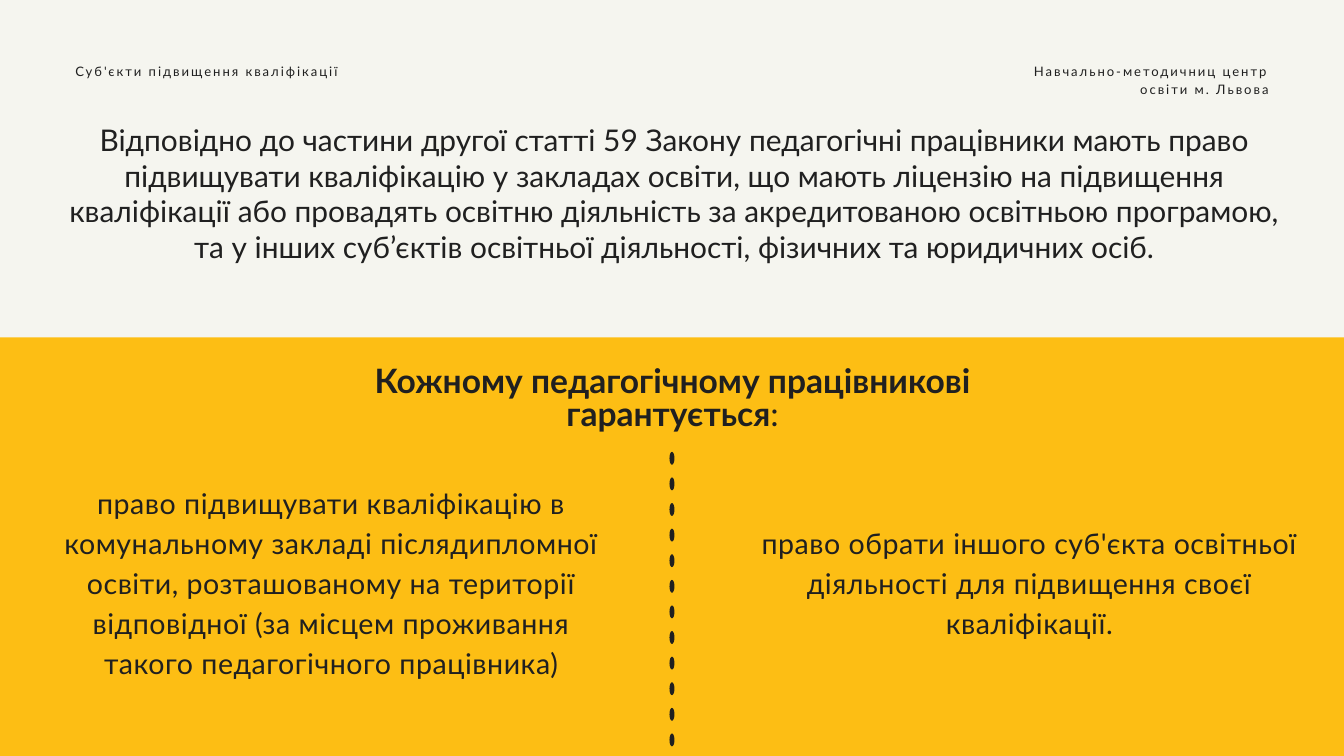
"""Builds a slide on where teachers may raise their qualification."""
from dataclasses import dataclass
from math import cos, pi, sin

from pptx import Presentation
from pptx.dml.color import RGBColor
from pptx.enum.shapes import MSO_SHAPE
from pptx.enum.text import MSO_AUTO_SIZE, PP_ALIGN
from pptx.util import Inches, Pt

LEFT, CENTER, RIGHT = PP_ALIGN.LEFT, PP_ALIGN.CENTER, PP_ALIGN.RIGHT
RECTANGLE = MSO_SHAPE.RECTANGLE
GROW = MSO_AUTO_SIZE.SHAPE_TO_FIT_TEXT
CELL = Inches(0.1)
COLUMNS, ROWS = 200, 112.5


@dataclass(frozen=True)
class TextStyle:
    size: float
    leading: float
    tracking: float = 0


@dataclass(frozen=True)
class Theme:
    font: str = "Lato"
    paper: RGBColor = RGBColor(0xF5, 0xF5, 0xEF)
    band: RGBColor = RGBColor(0xFD, 0xBE, 0x14)
    ink: RGBColor = RGBColor(0x20, 0x20, 0x20)
    label: TextStyle = TextStyle(14, 19.6, 2.1)
    intro: TextStyle = TextStyle(32, 38)
    heading: TextStyle = TextStyle(36, 36)
    right: TextStyle = TextStyle(30.6, 42.9, 0.6)


@dataclass(frozen=True)
class Area:
    column: float
    row: float
    columns: float
    rows: float

    def box(self) -> list[int]:
        return [round(n * CELL) for n in (self.column, self.row, self.columns, self.rows)]


@dataclass(frozen=True)
class Passage:
    area: Area
    style: TextStyle
    text: str
    align: PP_ALIGN = CENTER
    bold_lead: str = ""


@dataclass(frozen=True)
class DottedDivider:
    column: float
    first_row: float
    pitch: float
    dots: int
    radius_x: float
    radius_y: float


THEME = Theme()
BAND = Area(-3, 50.2, 206.8, 71.8)
DIVIDER = DottedDivider(COLUMNS / 2, 68.2, 3.81, 12, 0.37, 0.95)
PASSAGES = (
    Passage(
        Area(7.9, 18.2, 185, 21.3), THEME.intro,
        "Відповідно до частини другої статті 59 Закону педагогічні працівники мають право "
        "підвищувати кваліфікацію у закладах освіти, що мають ліцензію на підвищення "
        "кваліфікації або провадять освітню діяльність за акредитованою освітньою програмою, "
        "та у інших суб’єктів освітньої діяльності, фізичних та юридичних осіб.",
    ),
    Passage(
        Area(40.6, 54.5, 119, 5.2), THEME.heading, ":",
        bold_lead="Кожному педагогічному працівникові гарантується",
    ),
    Passage(
        Area(7.5, 71.4, 83.6, 29.3), THEME.right,
        "право підвищувати кваліфікацію в комунальному закладі післядипломної освіти, "
        "розташованому на території відповідної (за місцем проживання такого "
        "педагогічного працівника)",
    ),
    Passage(
        Area(153.2, 9, 35.6, 5.3), THEME.label,
        "Навчально-методичниц центр освіти м. Львова", RIGHT,
    ),
    Passage(
        Area(11.2, 9, 46.1, 2.6), THEME.label,
        "Суб'єкти підвищення кваліфікації", LEFT,
    ),
    Passage(
        Area(111.4, 77.4, 83.6, 17.4), THEME.right,
        "право обрати іншого суб'єкта освітньої діяльності для підвищення своєї кваліфікації.",
    ),
)


def paint(shape, color: RGBColor) -> None:
    shape.shadow.inherit = False
    shape.fill.solid()
    shape.fill.fore_color.rgb = color
    shape.line.fill.background()


def draw_band(slide, area: Area) -> None:
    paint(slide.shapes.add_shape(RECTANGLE, *area.box()), THEME.band)


def dot_outline(divider: DottedDivider, index: int, steps: int = 24) -> list[tuple[float, float]]:
    center = divider.first_row + index * divider.pitch
    angles = [2 * pi * step / steps for step in range(steps)]
    return [
        (CELL * (divider.column + divider.radius_x * cos(angle)),
         CELL * (center + divider.radius_y * sin(angle)))
        for angle in angles
    ]


def draw_divider(slide, divider: DottedDivider) -> None:
    first, *others = [dot_outline(divider, index) for index in range(divider.dots)]
    outline = slide.shapes.build_freeform(*first[0])
    outline.add_line_segments(first[1:], close=True)
    for dot in others:
        outline.move_to(*dot[0])
        outline.add_line_segments(dot[1:], close=True)
    paint(outline.convert_to_shape(), THEME.ink)


def add_run(paragraph, text: str, style: TextStyle, bold: bool) -> None:
    run = paragraph.add_run()
    run.text = text
    run.font.name = THEME.font
    run.font.size = Pt(style.size)
    run.font.bold = bold
    run.font.color.rgb = THEME.ink
    if style.tracking:
        run.font._element.set("spc", str(round(style.tracking * 100)))


def draw_passage(slide, passage: Passage) -> None:
    frame = slide.shapes.add_textbox(*passage.area.box()).text_frame
    frame.margin_left = frame.margin_right = frame.margin_top = frame.margin_bottom = 0
    frame.word_wrap = True
    frame.auto_size = GROW
    paragraph = frame.paragraphs[0]
    paragraph.alignment = passage.align
    paragraph.line_spacing = Pt(passage.style.leading)
    if passage.bold_lead:
        add_run(paragraph, passage.bold_lead, passage.style, True)
    add_run(paragraph, passage.text, passage.style, False)


def main() -> None:
    presentation = Presentation()
    presentation.slide_width = round(COLUMNS * CELL)
    presentation.slide_height = round(ROWS * CELL)
    slide = presentation.slides.add_slide(presentation.slide_layouts[6])
    slide.background.fill.solid()
    slide.background.fill.fore_color.rgb = THEME.paper
    draw_band(slide, BAND)
    draw_divider(slide, DIVIDER)
    for passage in PASSAGES:
        draw_passage(slide, passage)
    presentation.save("out.pptx")


if __name__ == "__main__":
    main()
